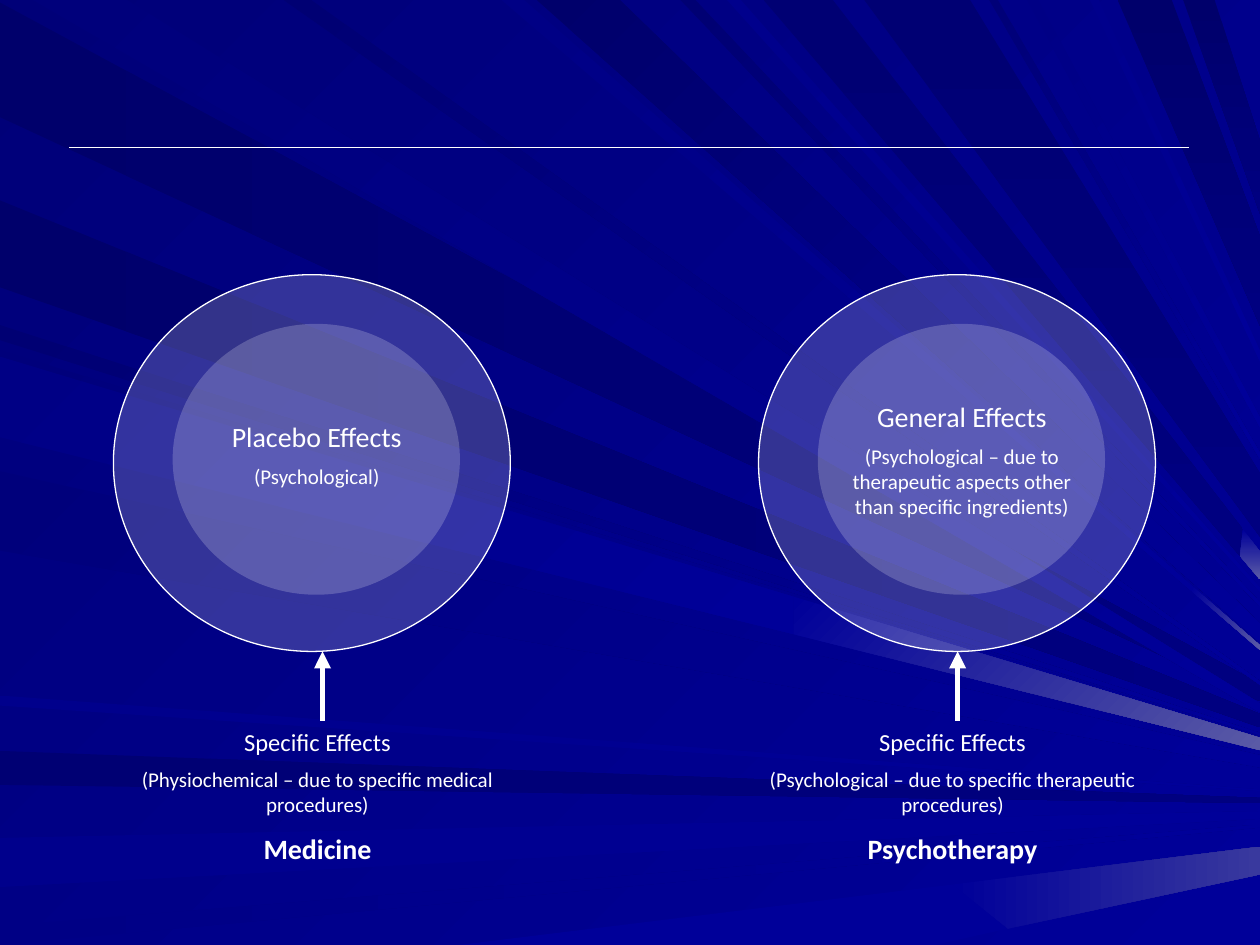
from lxml.etree import SubElement
from pptx import Presentation
from pptx.dml.color import RGBColor
from pptx.enum.shapes import MSO_CONNECTOR, MSO_SHAPE
from pptx.enum.text import PP_ALIGN
from pptx.oxml.ns import qn
from pptx.util import Inches, Pt

COLORS = {
    "white": "FFFFFF", "bg": "000078", "glow": "5A5AA6", "haze": "39399E",
    "black": "00006B", "navy": "000073", "deep": "00007B", "mid": "000080",
    "royal": "000085", "blue": "00008C", "bright": "000099",
}
FONT = "Calibri"
WIDTH, HEIGHT = 10, 7.5

# All rays of one edge run to one vanishing point right of the slide
VANISHING = {"left": (11.8, 6.4), "top": (11.8, 6.7)}

# Edge, start and end along it, first and last colour, share where the glow begins
RAYS = [
    ("left", 0.02, 0.93, "black", "mid", 1),
    ("top", 0.26, 1.01, "deep", "bright", 1),
    ("left", 5.96, 6.23, "navy", "mid", 1),
    ("left", 6.65, 7.04, "blue", "bright", 1),
    ("left", 7.35, 7.5, "royal", "bright", 1),
    ("left", 2.58, 2.7, "navy", "bright", 1),
    ("left", 1.59, 2.28, "black", "mid", 1),
    ("top", 3.98, 4.16, "royal", "bright", 0.91),
    ("top", 4.26, 4.92, "black", "bright", 1),
    ("top", 5.4, 5.52, "navy", "bright", 1),
    ("top", 6.06, 6.61, "navy", "mid", 0.96),
    ("top", 8.87, 9.3, "black", "mid", 1),
    ("top", 9.39, 9.64, "black", "mid", 1),
    ("left", 2.78, 3.42, "deep", "bright", 1),
    ("left", 3.74, 4.37, "deep", "bright", 1),
    ("left", 5.52, 5.6, "blue", "bright", 1),
    ("top", 2.25, 2.47, "navy", "bright", 1),
    ("top", 5.77, 5.88, "blue", "bright", 1),
    ("top", 6.86, 7.7, "navy", "mid", 1),
    ("top", 7.85, 7.92, "bg", "bright", 1),
    ("top", 8.15, 8.24, "royal", "bright", 1),
    ("top", 8.65, 8.72, "blue", "bright", 1),
    ("left", 2.83, 3.47, "royal", "bright", 0.63),
]


def rgb(name):
    return RGBColor.from_string(COLORS[name])


def between(start, end, share):
    return tuple(a + (b - a) * share for a, b in zip(start, end))


class SlideBuilder:
    def __init__(self, slide):
        self.s = slide

    def paint(self, fill, start, end, angle=0):
        """Fill solid when both colours agree, else with a linear gradient."""
        if start == end:
            fill.solid()
            fill.fore_color.rgb = rgb(start)
            return
        fill.gradient()
        fill.gradient_angle = (360 - angle) % 360
        for stop, color in zip(fill.gradient_stops, (start, end)):
            stop.color.rgb = rgb(color)

    def background(self, start, end, angle):
        self.paint(self.s.background.fill, start, end, angle)

    def polygon(self, points, start, end, angle=0):
        corners = [(Inches(x), Inches(y)) for x, y in points]
        builder = self.s.shapes.build_freeform(*corners[0])
        builder.add_line_segments(corners[1:], close=True)
        sp = builder.convert_to_shape()
        sp.shadow.inherit = False
        self.paint(sp.fill, start, end, angle)
        sp.line.fill.background()

    def ray(self, edge, low, high, start, end, glow_share):
        """Draw a ray from a slide edge to the right edge, with an optional pale tip."""
        focus = VANISHING[edge]
        roots = [(0, v) if edge == "left" else (v, 0) for v in (low, high)]
        tips = [between(root, focus, (WIDTH - root[0]) / (focus[0] - root[0]))
                for root in roots]
        cuts = [between(root, tip, glow_share) for root, tip in zip(roots, tips)]
        if end == "mid":
            angle = 0 if edge == "left" else 90
        else:
            angle = 0 if edge == "left" and low > HEIGHT / 2 else 45
        self.polygon([*roots, *reversed(cuts)], start, end, angle)
        if glow_share < 1:
            self.polygon([*cuts, *reversed(tips)], "bright", "glow", angle)

    def circle(self, x, y, w, h, outlined=False):
        """Add a white ellipse with 20 % opacity."""
        sp = self.s.shapes.add_shape(
            MSO_SHAPE.OVAL, Inches(x), Inches(y), Inches(w), Inches(h))
        sp.shadow.inherit = False
        self.paint(sp.fill, "white", "white")
        color = sp._element.spPr.find(qn("a:solidFill"))[0]
        SubElement(color, qn("a:alpha"), val="20000")
        if outlined:
            sp.line.color.rgb = rgb("white")
            sp.line.width = Pt(0.75)
        else:
            sp.line.fill.background()

    def line(self, x1, y1, x2, y2, width, arrow=False):
        c = self.s.shapes.add_connector(
            MSO_CONNECTOR.STRAIGHT, Inches(x1), Inches(y1), Inches(x2), Inches(y2))
        c.line.color.rgb = rgb("white")
        c.line.width = Pt(width)
        if arrow:
            ln = c._element.spPr.find(qn("a:ln"))
            SubElement(ln, qn("a:tailEnd"), type="triangle")
        SubElement(c._element.spPr, qn("a:effectLst"))

    def text(self, x, y, w, h, paragraphs):
        """Add centred paragraphs given as (text, size, bold)."""
        tf = self.s.shapes.add_textbox(
            Inches(x), Inches(y), Inches(w), Inches(h)).text_frame
        tf.word_wrap = True
        for i, (text, size, bold) in enumerate(paragraphs):
            p = tf.add_paragraph() if i else tf.paragraphs[0]
            p.alignment = PP_ALIGN.CENTER
            if i:
                p.space_before = Pt(size / 2)
            r = p.add_run()
            r.text = text
            r.font.name = FONT
            r.font.size = Pt(size)
            r.font.bold = bold
            r.font.color.rgb = rgb("white")


def main():
    prs = Presentation()
    prs.slide_width, prs.slide_height = Inches(WIDTH), Inches(HEIGHT)
    b = SlideBuilder(prs.slides.add_slide(prs.slide_layouts[6]))

    b.background("bg", "bright", 45)
    b.polygon([(3.64, HEIGHT), (7.42, HEIGHT), (8, 7.37), (7.56, 7.02)], "bright", "bright")
    b.polygon([(7.56, 7.02), (8, 7.37), (WIDTH, 6.94), (WIDTH, 6.72)], "bright", "haze")
    for ray in RAYS:
        b.ray(*ray)
    b.line(0.55, 1.17, 9.44, 1.17, 0.5)

    # Circle left, caption left, arrow x, inner text top and height, wording
    models = [
        (0.9, 0.75, 2.56, 3.28, 0.67, "Placebo Effects", "(Psychological)",
         "(Physiochemical – due to specific medical procedures)", "Medicine"),
        (6.02, 5.79, 7.6, 3.12, 1.27, "General Effects",
         "(Psychological – due to therapeutic aspects other than specific ingredients)",
         "(Psychological – due to specific therapeutic procedures)", "Psychotherapy"),
    ]
    for x, caption_x, arrow_x, y, h, inner, inner_note, outer_note, field in models:
        b.circle(x, 2.18, 3.15, 2.99, outlined=True)
        b.circle(x + 0.47, 2.57, 2.28, 2.15)
        b.text(x + 0.63, y, 1.97, h, [(inner, 16, False), (inner_note, 12, False)])
        b.line(arrow_x, 5.72, arrow_x, 5.17, 3.25, arrow=True)
        b.text(caption_x, 5.72, 3.54, 1.23, [
            ("Specific Effects", 14, False), (outer_note, 12, False), (field, 16, True)])

    prs.save("out.pptx")


if __name__ == "__main__":
    main()
